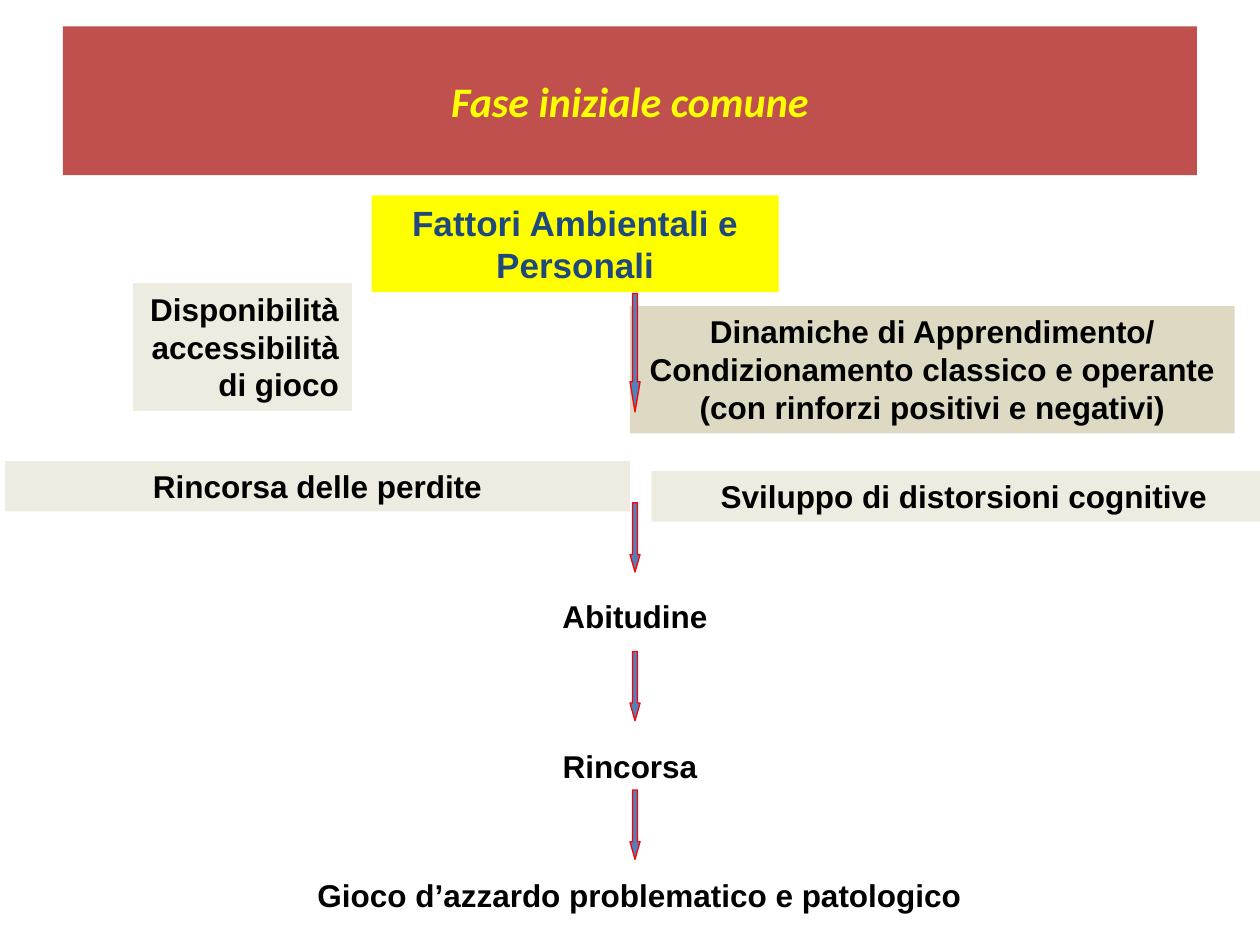
from pptx import Presentation
from pptx.dml.color import RGBColor
from pptx.enum.shapes import MSO_SHAPE as SHAPE
from pptx.enum.text import MSO_ANCHOR as ANCHOR, PP_ALIGN as ALIGN
from pptx.util import Inches, Pt

RED = RGBColor(0xC0, 0x50, 0x4D)
YELLOW = RGBColor(0xFF, 0xFF, 0x00)
NAVY = RGBColor(0x1F, 0x49, 0x7D)
BLUE = RGBColor(0x4F, 0x81, 0xBD)
OUTLINE = RGBColor(0xFF, 0x00, 0x00)
TAN = RGBColor(0xDD, 0xD9, 0xC3)
CREAM = RGBColor(0xEE, 0xEC, 0xE1)
WHITE = RGBColor(0xFF, 0xFF, 0xFF)
BLACK = RGBColor(0x00, 0x00, 0x00)


def write(tf, text, font="Arial", size=18, color=BLACK, italic=False,
          align=ALIGN.CENTER, anchor=ANCHOR.TOP):
    tf.word_wrap = True
    tf.vertical_anchor = anchor
    p = tf.paragraphs[0]
    p.alignment = align
    r = p.add_run()
    r.text = text
    r.font.name = font
    r.font.size = Pt(size)
    r.font.bold = True
    r.font.italic = italic
    r.font.color.rgb = color


class SlideBuilder:
    arrow_left = 5
    arrow_width = 0.08
    line_width = Pt(0.75)

    def __init__(self, slide):
        self.s = slide

    def shape(self, kind, box, fill, line=None):
        sp = self.s.shapes.add_shape(kind, *map(Inches, box))
        sp.shadow.inherit = False
        sp.fill.solid()
        sp.fill.fore_color.rgb = fill
        if line is None:
            sp.line.fill.background()
        else:
            sp.line.color.rgb = line
            sp.line.width = self.line_width
        return sp

    def box(self, text, box, fill, line=None, **fmt):
        sp = self.shape(SHAPE.RECTANGLE, box, fill, line)
        write(sp.text_frame, text, **fmt)

    def arrow(self, top, height, head):
        box = (self.arrow_left, top, self.arrow_width, height)
        sp = self.shape(SHAPE.DOWN_ARROW, box, BLUE, OUTLINE)
        sp.adjustments[0] = 0.5
        sp.adjustments[1] = head / self.arrow_width


def main():
    prs = Presentation()
    prs.slide_width, prs.slide_height = Inches(10), Inches(7.5)
    b = SlideBuilder(prs.slides.add_slide(prs.slide_layouts[6]))

    b.box("Fase iniziale comune", (0.5, 0.21, 9, 1.18), RED, font="Calibri",
          size=24, color=YELLOW, italic=True, anchor=ANCHOR.MIDDLE)
    b.box("Fattori Ambientali e Personali", (2.95, 1.55, 3.23, 0.77), YELLOW,
          size=20, color=NAVY)
    b.box("Dinamiche di Apprendimento/ Condizionamento classico e operante "
          "(con rinforzi positivi e negativi)", (5, 2.43, 4.8, 1.01), TAN)

    for text, left, top, width in (
        ("Abitudine", 4.29, 4.69, 1.5),
        ("Rincorsa", 4.21, 5.88, 1.58),
        ("Gioco d’azzardo problematico e patologico", 2.32, 6.9, 5.51),
    ):
        b.box(text, (left, top, width, 0.4), WHITE)

    b.arrow(2.33, 0.94, head=0.24)
    for top in (3.99, 5.17, 6.27):
        b.arrow(top, 0.55, head=0.14)

    b.box("Disponibilità accessibilità di gioco", (1.06, 2.25, 1.73, 1.01),
          CREAM, line=CREAM, align=ALIGN.RIGHT)
    b.box("Sviluppo di distorsioni cognitive", (5.17, 3.74, 4.96, 0.4), CREAM)
    b.box("Rincorsa delle perdite", (0.04, 3.66, 4.96, 0.4), CREAM)

    prs.save("out.pptx")


if __name__ == "__main__":
    main()
